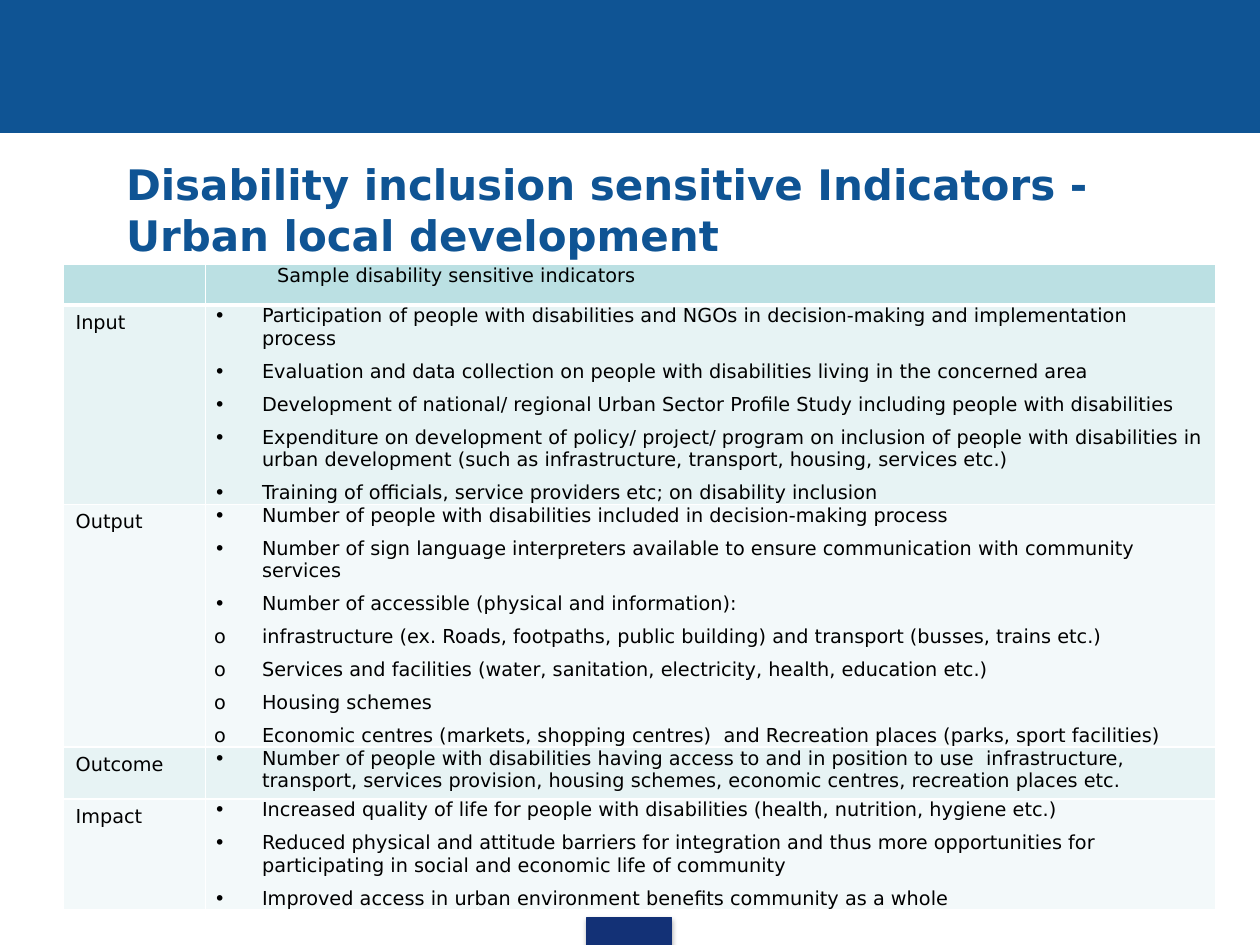
import pptx
import pptx.dml.color
import pptx.enum.shapes
import pptx.enum.text
import pptx.oxml
import pptx.oxml.ns
import pptx.util
from pptx.util import Inches

FONT = "DejaVu Sans"
BLUE, NAVY, WHITE, BLACK = "0F5494", "133176", "FFFFFF", "000000"
HEADER_FILL, BAND_FILLS = "BBE0E3", ("E7F3F4", "F3F9FA")
COL_WIDTHS = (1.13, 8.02)
ROW_HEIGHTS = (0.32, 1.55, 1.89, 0.41, 0.87)
HEADING = "Sample disability sensitive indicators"

# Each row: label, then (bullet, text) pairs
INDICATORS = [
    ("Input", [
        ("•", "Participation of people with disabilities and NGOs in decision-making and implementation process"),
        ("•", "Evaluation and data collection on people with disabilities living in the concerned area"),
        ("•", "Development of national/ regional Urban Sector Profile Study including people with disabilities"),
        ("•", "Expenditure on development of policy/ project/ program on inclusion of people with disabilities "
              "in urban development (such as infrastructure, transport, housing, services etc.)"),
        ("•", "Training of officials, service providers etc; on disability inclusion"),
    ]),
    ("Output", [
        ("•", "Number of people with disabilities included in decision-making process"),
        ("•", "Number of sign language interpreters available to ensure communication with community services"),
        ("•", "Number of accessible (physical and information):"),
        ("o", "infrastructure (ex. Roads, footpaths, public building) and transport (busses, trains etc.)"),
        ("o", "Services and facilities (water, sanitation, electricity, health, education etc.)"),
        ("o", "Housing schemes"),
        ("o", "Economic centres (markets, shopping centres)  and Recreation places (parks, sport facilities)"),
    ]),
    ("Outcome", [
        ("•", "Number of people with disabilities having access to and in position to use  infrastructure, "
              "transport, services provision, housing schemes, economic centres, recreation places etc."),
    ]),
    ("Impact", [
        ("•", "Increased quality of life for people with disabilities (health, nutrition, hygiene etc.)"),
        ("•", "Reduced physical and attitude barriers for integration and thus more opportunities for "
              "participating in social and economic life of community"),
        ("•", "Improved access in urban environment benefits community as a whole"),
    ]),
]


def rgb(color):
    return pptx.dml.color.RGBColor.from_string(color)


def add_xml(parent, xml):
    """Append a drawing element, given without its namespace declaration."""
    head, tail = xml.split(">", 1)
    slash = "/" if head.endswith("/") else ""
    head = f"{head.rstrip('/')} {pptx.oxml.ns.nsdecls('a')}{slash}"
    parent.append(pptx.oxml.parse_xml(f"{head}>{tail}"))


def set_font(p, size, color, bold=False):
    p.font.name, p.font.size, p.font.bold = FONT, pptx.util.Pt(size), bold
    p.font.color.rgb = rgb(color)


def set_indent(p, left, first):
    pPr = p._p.get_or_add_pPr()
    pPr.set("marL", str(Inches(left)))
    pPr.set("indent", str(Inches(first)))
    return pPr


def add_block(s, x, y, w, h, color):
    sp = s.shapes.add_shape(pptx.enum.shapes.MSO_SHAPE.RECTANGLE, x, y, w, h)
    sp.shadow.inherit = False
    sp.fill.solid()
    sp.fill.fore_color.rgb = rgb(color)
    sp.line.color.rgb = rgb(color)
    sp.line.width = pptx.util.Pt(0.75)
    return sp


def add_footer_tab(s, x, y, w, h):
    sp = add_block(s, x, y, w, h, NAVY)
    effects = sp._element.spPr.find(pptx.oxml.ns.qn("a:effectLst"))
    add_xml(effects, f'<a:outerShdw blurRad="{pptx.util.Pt(3.1)}" dist="{pptx.util.Pt(1.8)}" '
                     'dir="5400000" rotWithShape="0"><a:srgbClr val="000000">'
                     '<a:alpha val="35000"/></a:srgbClr></a:outerShdw>')


def fill_title(s, x, y, w, h, text):
    sp = s.shapes.title
    sp.left, sp.top, sp.width, sp.height = x, y, w, h
    tf = sp.text_frame
    tf.text = text
    tf.word_wrap = True
    tf.vertical_anchor = pptx.enum.text.MSO_ANCHOR.MIDDLE
    p = tf.paragraphs[0]
    set_indent(p, 0.39, 0)
    p.alignment = pptx.enum.text.PP_ALIGN.LEFT
    set_font(p, 24, BLUE, bold=True)


def style_cell(cell, row, fill):
    """White borders, heavier between the header and the body, then the fill."""
    tcPr = cell._tc.get_or_add_tcPr()
    heavy = {0: "B", 1: "T"}.get(row)
    for side in "LRTB":
        width = pptx.util.Pt(3 if side == heavy else 1)
        add_xml(tcPr, f'<a:ln{side} w="{width}"><a:solidFill><a:srgbClr val="{WHITE}"/>'
                      f'</a:solidFill></a:ln{side}>')
    cell.fill.solid()
    cell.fill.fore_color.rgb = rgb(fill)


def tighten(cell):
    cell.margin_left = cell.margin_right = Inches(0.07)
    cell.margin_top = cell.margin_bottom = 0


def fill_header(cell):
    tighten(cell)
    cell.text = HEADING
    p = cell.text_frame.paragraphs[0]
    set_indent(p, 0, 0.5)
    p.space_after = pptx.util.Pt(3)
    set_font(p, 11, BLACK)


def fill_bullets(cell, items):
    tighten(cell)
    tf = cell.text_frame
    for i, (bullet, text) in enumerate(items):
        p = tf.add_paragraph() if i else tf.paragraphs[0]
        p.text = text
        pPr = set_indent(p, 0.38, -0.38)
        add_xml(pPr, f'<a:buFont typeface="{FONT}"/>')
        add_xml(pPr, f'<a:buChar char="{bullet}"/>')
        p.space_before = pptx.util.Pt(3 if i else 0)
        p.space_after = pptx.util.Pt(3)
        set_font(p, 11, BLACK)


def add_indicator_table(s, x, y, w, h):
    table = s.shapes.add_table(len(ROW_HEIGHTS), len(COL_WIDTHS), x, y, w, h).table
    for col, width in zip(table.columns, COL_WIDTHS):
        col.width = Inches(width)
    for row, height in zip(table.rows, ROW_HEIGHTS):
        row.height = Inches(height)
    for r in range(len(ROW_HEIGHTS)):
        fill = BAND_FILLS[(r - 1) % 2] if r else HEADER_FILL
        for cell in table.rows[r].cells:
            style_cell(cell, r, fill)
    tighten(table.cell(0, 0))
    set_font(table.cell(0, 0).text_frame.paragraphs[0], 11, BLACK)
    fill_header(table.cell(0, 1))
    for r, (label, items) in enumerate(INDICATORS, 1):
        cell = table.cell(r, 0)
        cell.text = label
        set_font(cell.text_frame.paragraphs[0], 11, BLACK)
        fill_bullets(table.cell(r, 1), items)


def main():
    prs = pptx.Presentation()
    prs.slide_width, prs.slide_height = Inches(10), Inches(7.5)
    s = prs.slides.add_slide(prs.slide_layouts[5])
    add_footer_tab(s, Inches(4.66), Inches(7.28), Inches(0.67), Inches(0.22))
    add_block(s, 0, 0, prs.slide_width, Inches(1.05), BLUE)
    fill_title(s, Inches(0.51), Inches(1.15), Inches(9), Inches(1.02),
               "Disability inclusion sensitive Indicators - Urban local development")
    add_indicator_table(s, Inches(0.5), Inches(2.1), Inches(sum(COL_WIDTHS)), Inches(sum(ROW_HEIGHTS)))
    prs.save("out.pptx")


if __name__ == "__main__":
    main()
